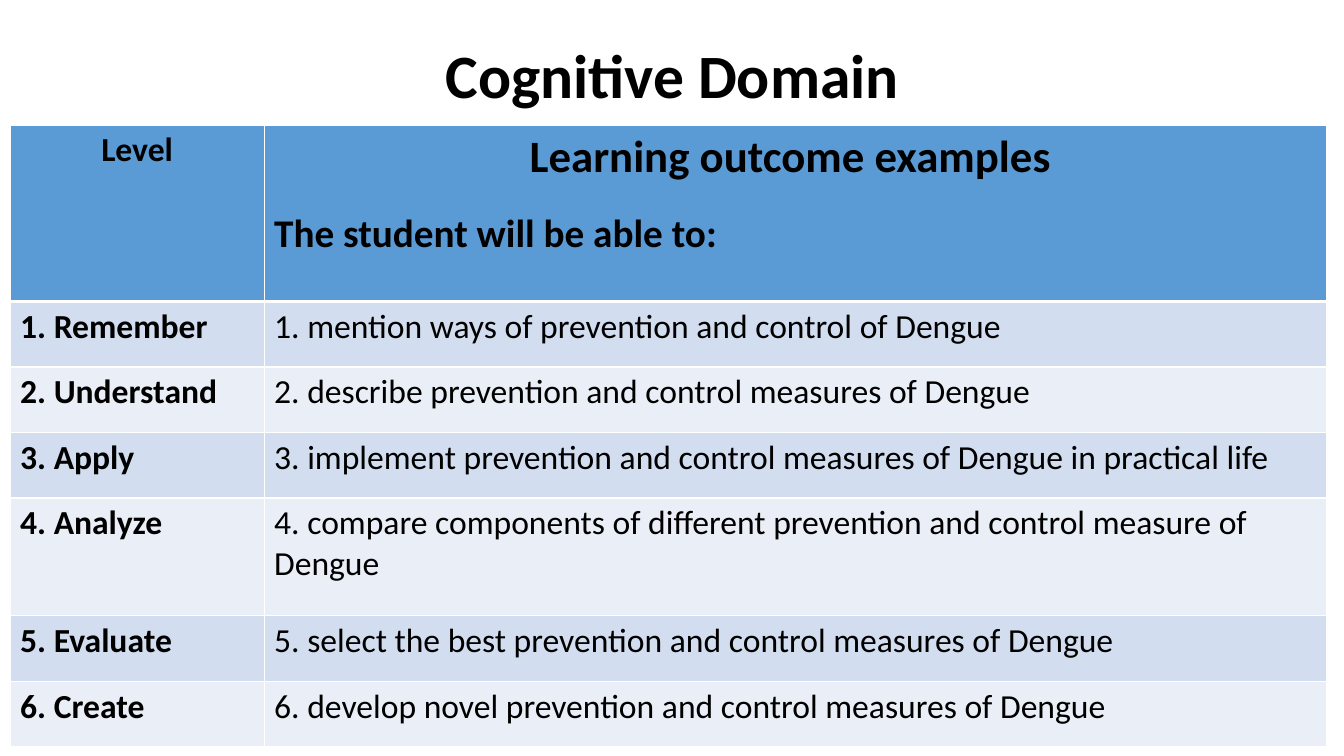
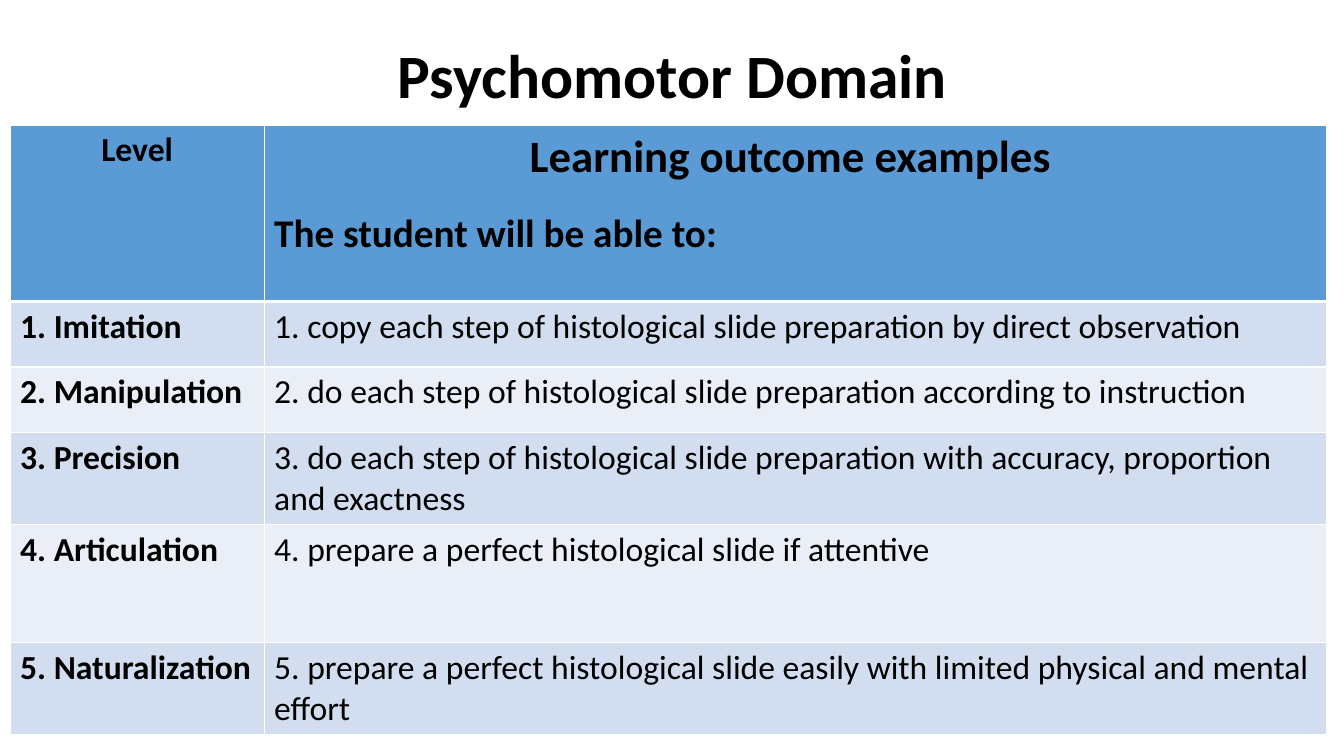
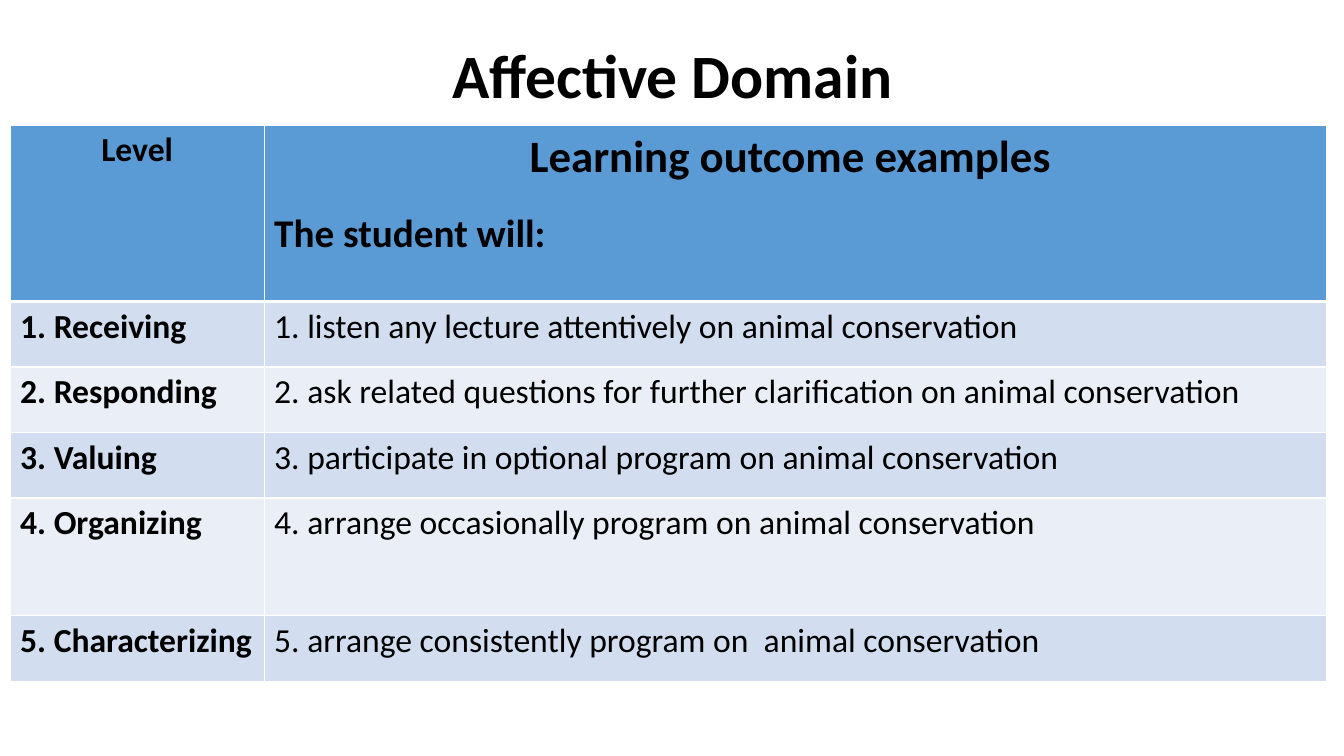
from lxml import etree
from pptx import Presentation
from pptx import util as u
from pptx.dml.color import RGBColor
from pptx.enum import text
from pptx.oxml import ns

FONT = "Calibri"
COLORS = {
    "text": "000000",
    "header": "5B9BD5",
    "odd": "D2DEEF",
    "even": "EAEFF7",
    "border": "FFFFFF",
}
SLIDE_W, SLIDE_H = 13.33, 7.5
TITLE_BOX = (0.92, 0.05, 11.5, 1.45)
TABLE_LEFT, TABLE_TOP = 0.1, 1.24
COLUMNS = (2.52, 10.54)
HEADER_H, ROW_H, TALL_ROW_H = 1.75, 0.65, 1.17
TALL_ROW = 4
CENTER, LEFT = text.PP_ALIGN.CENTER, text.PP_ALIGN.LEFT

DOMAINS = [
    ("Cognitive Domain", "The student will be able to:", [
        ("Remember", "mention ways of prevention and control of Dengue"),
        ("Understand", "describe prevention and control measures of Dengue"),
        ("Apply", "implement prevention and control measures of Dengue in practical life"),
        ("Analyze", "compare components of different prevention and control measure of Dengue"),
        ("Evaluate", "select the best prevention and control measures of Dengue"),
        ("Create", "develop novel prevention and control measures of Dengue"),
    ]),
    ("Psychomotor Domain", "The student will be able to:", [
        ("Imitation", "copy each step of histological slide preparation by direct observation"),
        ("Manipulation", "do each step of histological slide preparation according to instruction"),
        ("Precision", "do each step of histological slide preparation with accuracy, "
                      "proportion and exactness"),
        ("Articulation", "prepare a perfect histological slide if attentive"),
        ("Naturalization", "prepare a perfect histological slide easily with limited "
                           "physical and mental effort"),
    ]),
    ("Affective Domain", "The student will:", [
        ("Receiving", "listen any lecture attentively on animal conservation"),
        ("Responding", "ask related questions for further clarification on animal conservation"),
        ("Valuing", "participate in optional program on animal conservation"),
        ("Organizing", "arrange occasionally program on animal conservation"),
        ("Characterizing", "arrange consistently program on  animal conservation"),
    ]),
]


def rgb(name):
    return RGBColor.from_string(COLORS[name])


def write(p, words, size, bold=True, align=LEFT):
    p.text = words
    p.alignment = align
    for r in p.runs:
        r.font.name = FONT
        r.font.size = u.Pt(size)
        r.font.bold = bold
        r.font.color.rgb = rgb("text")


def add_title(slide, words):
    title = slide.shapes.title
    title.left, title.top, title.width, title.height = map(u.Inches, TITLE_BOX)
    tf = title.text_frame
    tf.vertical_anchor = text.MSO_ANCHOR.MIDDLE
    write(tf.paragraphs[0], words, 44, align=CENTER)
    tf.paragraphs[0].line_spacing = 0.9


def set_borders(cell, top, bottom):
    """Draw the four cell edges, 1 pt at the sides."""
    tc_pr = cell._tc.get_or_add_tcPr()
    for side, width in (("L", 1), ("R", 1), ("T", top), ("B", bottom)):
        ln = etree.SubElement(tc_pr, ns.qn("a:ln" + side), w=str(u.Pt(width)))
        fill = etree.SubElement(ln, ns.qn("a:solidFill"))
        etree.SubElement(fill, ns.qn("a:srgbClr"), val=COLORS["border"])


def fill_cell(cell, color, lines, top=1, bottom=1):
    """Each line holds the words, then size, bold and alignment as needed."""
    set_borders(cell, top, bottom)
    cell.fill.solid()
    cell.fill.fore_color.rgb = rgb(color)
    tf = cell.text_frame
    for i, line in enumerate(lines):
        p = tf.add_paragraph() if i else tf.paragraphs[0]
        write(p, *line)
        p.space_before, p.space_after = u.Pt(6), u.Pt(12)


def add_outcome_table(slide, lead_in, outcomes):
    heights = [HEADER_H] + [TALL_ROW_H if n == TALL_ROW else ROW_H
                            for n in range(1, len(outcomes) + 1)]
    box = (TABLE_LEFT, TABLE_TOP, sum(COLUMNS), sum(heights))
    table = slide.shapes.add_table(len(heights), len(COLUMNS), *map(u.Inches, box)).table
    for column, width in zip(table.columns, COLUMNS):
        column.width = u.Inches(width)
    for row, height in zip(table.rows, heights):
        row.height = u.Inches(height)

    fill_cell(table.cell(0, 0), "header", [("Level", 24, True, CENTER)], bottom=3)
    fill_cell(table.cell(0, 1), "header",
              [("Learning outcome examples ", 32, True, CENTER), (lead_in, 28)], bottom=3)
    for n, (level, outcome) in enumerate(outcomes, 1):
        color = "odd" if n % 2 else "even"
        top = 3 if n == 1 else 1
        fill_cell(table.cell(n, 0), color, [(f"{n}. {level}", 24)], top)
        fill_cell(table.cell(n, 1), color, [(f"{n}. {outcome}", 24, False)], top)


def main():
    prs = Presentation()
    prs.slide_width, prs.slide_height = u.Inches(SLIDE_W), u.Inches(SLIDE_H)
    title_only = prs.slide_layouts[5]
    for name, lead_in, outcomes in DOMAINS:
        slide = prs.slides.add_slide(title_only)
        add_title(slide, name)
        add_outcome_table(slide, lead_in, outcomes)
    prs.save("out.pptx")


if __name__ == "__main__":
    main()
